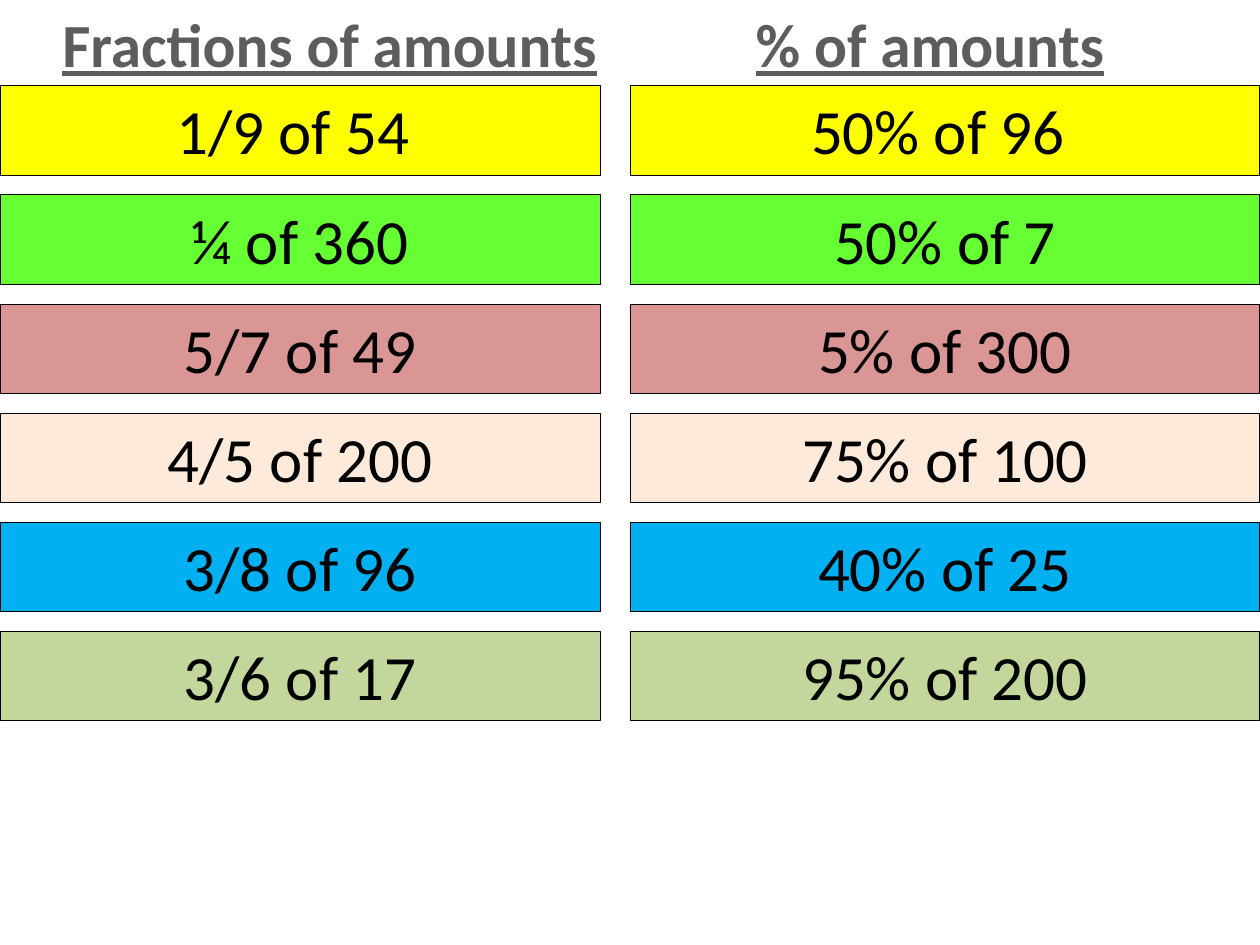
"""Build a slide of fraction and percentage questions in two columns of coloured bars."""
from dataclasses import dataclass

from pptx import Presentation
from pptx.dml.color import RGBColor
from pptx.enum.shapes import MSO_SHAPE
from pptx.enum.text import MSO_ANCHOR, PP_ALIGN
from pptx.util import Cm, Pt

RECT = MSO_SHAPE.RECTANGLE
CENTER = PP_ALIGN.CENTER
TOP = MSO_ANCHOR.TOP

COLUMNS = [
    {
        "heading": "Fractions of amounts",
        "heading_left": 0,
        "left": 0,
        "width": 12.1,
        "questions": ["1/9 of 54 ", "¼ of 360", "5/7 of 49",
                      "4/5 of 200", "3/8 of 96", "3/6 of 17"],
    },
    {
        "heading": "% of amounts",
        "heading_left": 12.1,
        "left": 12.7,
        "width": 12.7,
        "questions": ["50% of 96 ", "50% of 7", "5% of 300",
                      "75% of 100", "40% of 25", "95% of 200"],
    },
]
HEADING_WIDTH, HEADING_HEIGHT = 13.3, 1.75
BAR_TOP, BAR_HEIGHT, BAR_PITCH = 1.73, 1.8, 2.2


@dataclass(frozen=True)
class Theme:
    """Colours, font and type sizes."""
    font: str = "Calibri"
    heading_size: int = 35
    question_size: int = 36
    heading: str = "5D5D5D"
    ink: str = "000000"
    bars: tuple = ("FFFF00", "66FF33", "D99694", "FDEADA", "00B0F0", "C3D69B")


THEME = Theme()


def write(sp, text, size, color, strong=False):
    """Put one centred line of text in a shape."""
    tf = sp.text_frame
    tf.word_wrap = True
    tf.vertical_anchor = TOP
    p = tf.paragraphs[0]
    p.text = text
    p.alignment = CENTER
    p.font.name = THEME.font
    p.font.size = Pt(size)
    p.font.bold = p.font.underline = strong
    p.font.color.rgb = RGBColor.from_string(color)


def add_heading(s, column):
    """Add the underlined heading of a column."""
    sp = s.shapes.add_textbox(Cm(column["heading_left"]), Cm(0),
                              Cm(HEADING_WIDTH), Cm(HEADING_HEIGHT))
    write(sp, column["heading"], THEME.heading_size, THEME.heading, strong=True)


def add_bar(s, column, row, question, fill):
    """Add one question bar."""
    sp = s.shapes.add_shape(RECT, Cm(column["left"]), Cm(BAR_TOP + row * BAR_PITCH),
                            Cm(column["width"]), Cm(BAR_HEIGHT))
    sp.shadow.inherit = False
    sp.fill.solid()
    sp.fill.fore_color.rgb = RGBColor.from_string(fill)
    sp.line.color.rgb = RGBColor.from_string(THEME.ink)
    sp.line.width = Pt(0.5)
    write(sp, question, THEME.question_size, THEME.ink)


def main():
    """Build and save the slide."""
    prs = Presentation()
    prs.slide_width, prs.slide_height = Cm(25.4), Cm(19.05)
    s = prs.slides.add_slide(prs.slide_layouts.get_by_name("Blank"))
    for column in COLUMNS:
        add_heading(s, column)
        for row, (question, fill) in enumerate(zip(column["questions"], THEME.bars)):
            add_bar(s, column, row, question, fill)
    prs.save("out.pptx")


if __name__ == "__main__":
    main()
